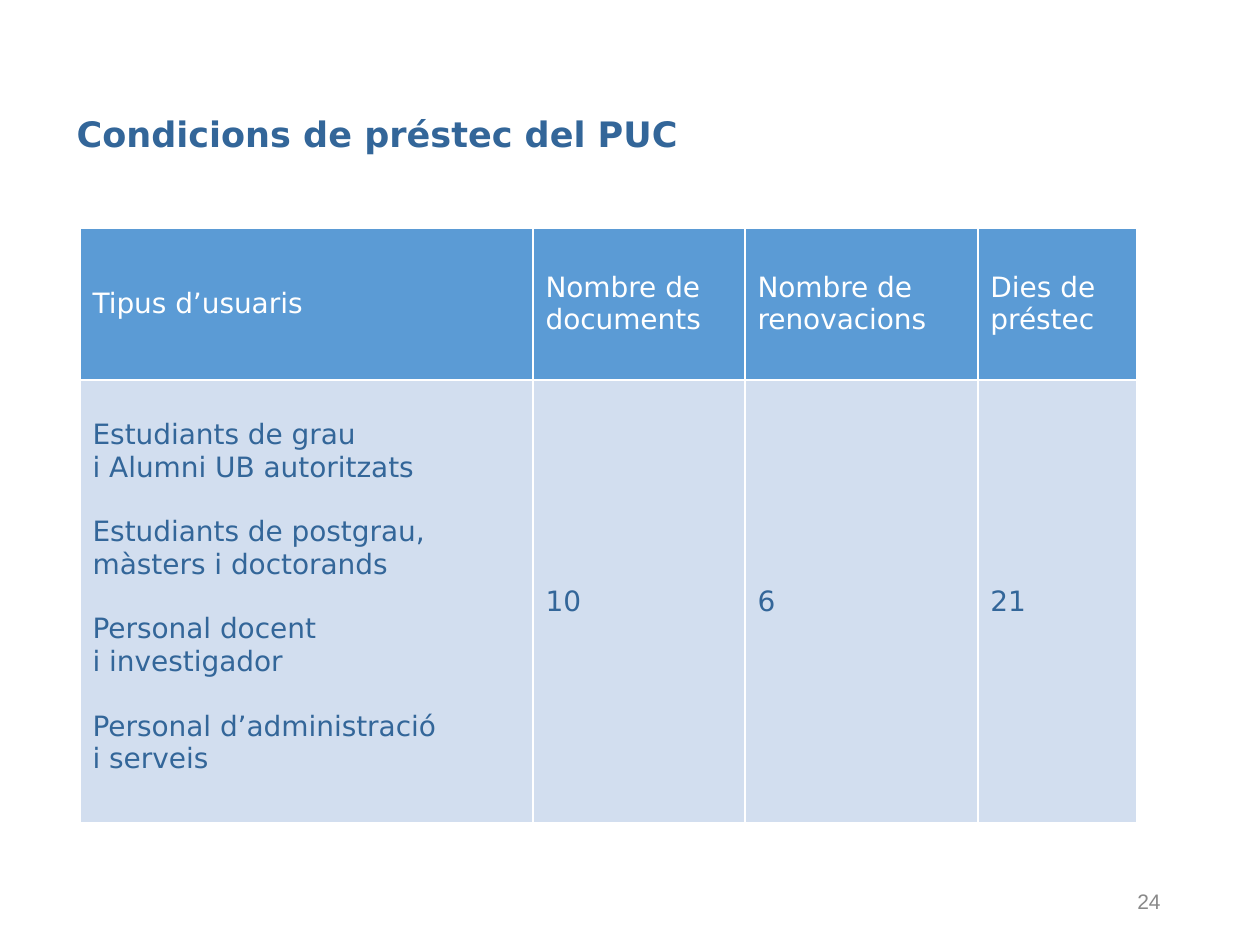
from lxml import etree
from pptx import Presentation
from pptx import util as u
from pptx.dml.color import RGBColor
from pptx.enum import text
from pptx.oxml import ns

TITLE = "Condicions de préstec del PUC"
PAGE_NUMBER = "24"
HEADERS = ["Tipus d’usuaris", "Nombre de documents", "Nombre de renovacions", "Dies de préstec"]
USER_GROUPS = [
    ["Estudiants de grau", "i Alumni UB autoritzats"],
    ["Estudiants de postgrau, màsters i doctorands"],
    ["Personal docent", "i investigador"],
    ["Personal d’administració", "i serveis"],
]
LOAN_LIMITS = ["10", "6", "21"]

COLORS = {"blue": "336699", "header": "5B9BD5", "body": "D2DEEF", "white": "FFFFFF", "grey": "898989"}
FONT = "DejaVu Sans"
PX = u.Inches(1) // 126
COLUMN_WIDTHS = [453, 212, 233, 159]
ROW_HEIGHTS = [152, 443]
TABLE_LEFT, TABLE_TOP = 80, 228
TABLE_SIZE = 16
LINE_POINTS = 18.5  # height of one table text line
GROUP_TOP_MARGIN = 39


def px(*lengths):
    return [length * PX for length in lengths]


def add_text(paragraph, words, size, color, font=FONT, bold=False):
    run = paragraph.add_run()
    run.text = words
    run.font.name = font
    run.font.size = u.Pt(size)
    run.font.bold = bold
    run.font.color.rgb = RGBColor.from_string(COLORS[color])


def style_cell(cell, fill):
    """Fill the cell, centre it vertically and draw thin white borders."""
    cell.vertical_anchor = text.MSO_ANCHOR.MIDDLE
    properties = cell._tc.get_or_add_tcPr()
    for side in ("lnL", "lnR", "lnT", "lnB"):
        line = etree.SubElement(properties, ns.qn(f"a:{side}"), w=str(u.Pt(1)))
        solid = etree.SubElement(line, ns.qn("a:solidFill"))
        etree.SubElement(solid, ns.qn("a:srgbClr"), val=COLORS["white"])
    cell.fill.solid()
    cell.fill.fore_color.rgb = RGBColor.from_string(COLORS[fill])


def add_title(slide):
    title = slide.shapes.title
    title.left, title.top, title.width, title.height = px(64, 111, 1121, 50)
    frame = title.text_frame
    frame.word_wrap = True
    frame.auto_size = text.MSO_AUTO_SIZE.SHAPE_TO_FIT_TEXT
    frame.vertical_anchor = text.MSO_ANCHOR.TOP
    paragraph = frame.paragraphs[0]
    paragraph.alignment = text.PP_ALIGN.LEFT
    paragraph.line_spacing = 0.9
    add_text(paragraph, TITLE, 20, "blue", bold=True)


def add_user_groups(cell):
    """Write each group as lines, with one line of space between groups."""
    cell.vertical_anchor = text.MSO_ANCHOR.TOP
    cell.margin_top = GROUP_TOP_MARGIN * PX
    frame = cell.text_frame
    for group_index, group in enumerate(USER_GROUPS):
        for line_index, line in enumerate(group):
            first = group_index == line_index == 0
            paragraph = frame.paragraphs[0] if first else frame.add_paragraph()
            if group_index and not line_index:
                paragraph.space_before = u.Pt(LINE_POINTS)
            add_text(paragraph, line, TABLE_SIZE, "blue")


def add_loan_table(slide):
    box = px(TABLE_LEFT, TABLE_TOP, sum(COLUMN_WIDTHS), sum(ROW_HEIGHTS))
    table = slide.shapes.add_table(len(ROW_HEIGHTS), len(COLUMN_WIDTHS), *box).table
    table.horz_banding = False
    for column, width in zip(table.columns, COLUMN_WIDTHS):
        column.width = width * PX
    for row, height in zip(table.rows, ROW_HEIGHTS):
        row.height = height * PX
    rows = [(HEADERS, "header", "white"), ([None] + LOAN_LIMITS, "body", "blue")]
    for row, (values, fill, color) in zip(table.rows, rows):
        for cell, value in zip(row.cells, values):
            style_cell(cell, fill)
            if value is None:
                add_user_groups(cell)
            else:
                add_text(cell.text_frame.paragraphs[0], value, TABLE_SIZE, color)


def add_page_number(slide):
    frame = slide.shapes.add_textbox(*px(890, 876, 283, 50)).text_frame
    frame.word_wrap = True
    frame.vertical_anchor = text.MSO_ANCHOR.MIDDLE
    paragraph = frame.paragraphs[0]
    paragraph.alignment = text.PP_ALIGN.RIGHT
    add_text(paragraph, PAGE_NUMBER, 12, "grey", font="Arial")


def main():
    presentation = Presentation()
    presentation.slide_width, presentation.slide_height = u.Inches(10), u.Inches(7.5)
    slide = presentation.slides.add_slide(presentation.slide_layouts[5])
    add_title(slide)
    add_page_number(slide)
    add_loan_table(slide)
    presentation.save("out.pptx")


if __name__ == "__main__":
    main()
